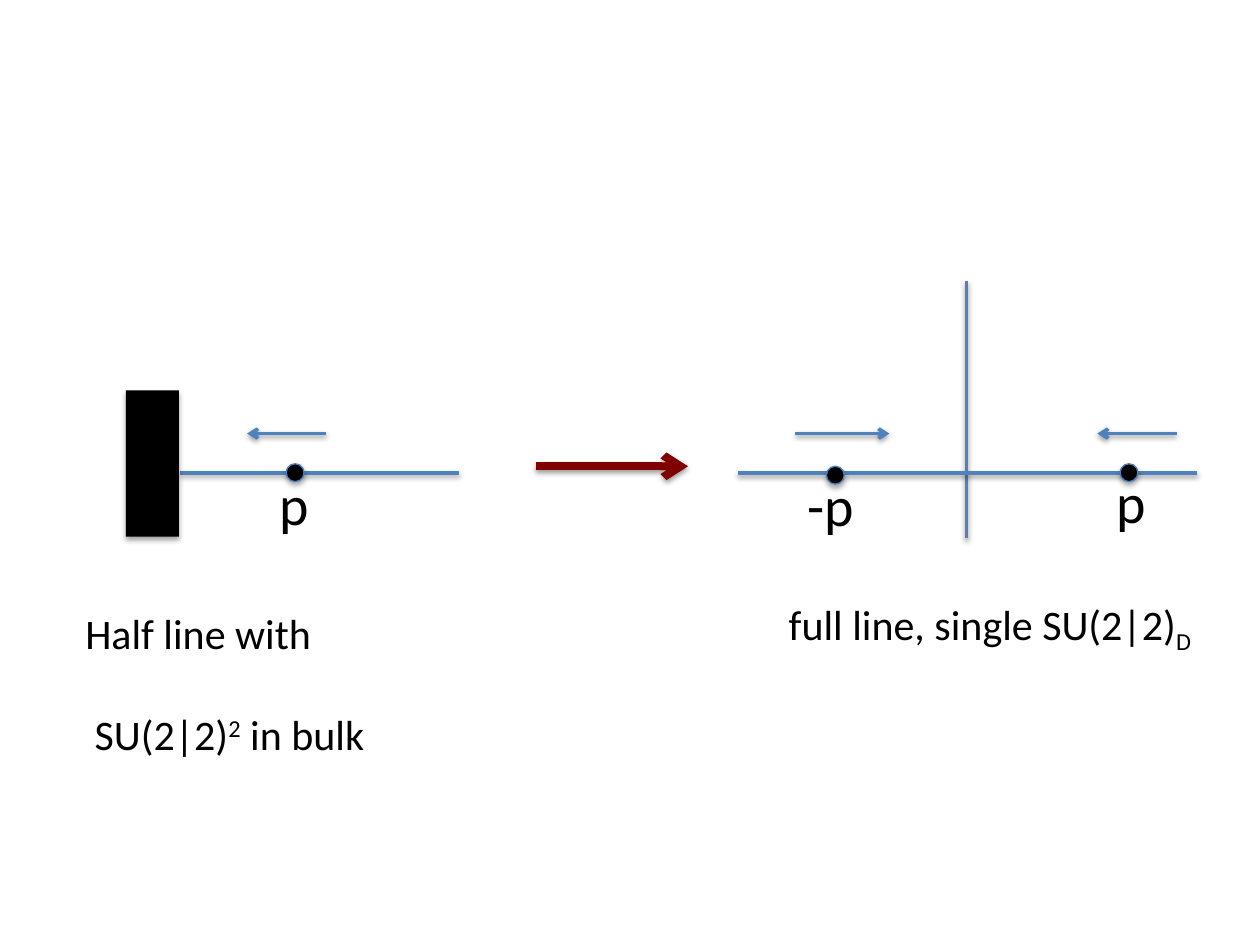
from dataclasses import dataclass

from lxml import etree
from pptx import Presentation
from pptx.dml.color import RGBColor
from pptx.enum import shapes, text
from pptx.oxml import ns
from pptx.util import Cm, Pt


@dataclass(frozen=True)
class Theme:
    """Colours, font and type sizes of the slide."""
    font: str = "Calibri"
    ink: str = "000000"
    axis: str = "4F81BD"
    edge: str = "4B7EBC"
    step: str = "800000"
    label: int = 32
    note: int = 24


class Sketch:
    """Draws styled elements on the current slide."""

    def __init__(self, slide, theme):
        self.slide = slide
        self.theme = theme

    def shade(self, props, alpha, dist):
        """Put a soft shadow below an element."""
        for old in props.findall(ns.qn("a:effectLst")):
            props.remove(old)
        effect = etree.SubElement(props, ns.qn("a:effectLst"))
        glow = etree.SubElement(effect, ns.qn("a:outerShdw"))
        values = {"blurRad": Pt(3.1), "dist": Pt(dist), "dir": 5400000, "rotWithShape": 0}
        for key, value in values.items():
            glow.set(key, str(int(value)))
        tint = etree.SubElement(glow, ns.qn("a:srgbClr"), val=self.theme.ink)
        etree.SubElement(tint, ns.qn("a:alpha"), val=str(alpha * 1000))

    def line(self, start, end, color=None, width=2, arrow=False):
        """Draw a straight line, with an arrowhead at its end if asked."""
        ends = [Cm(v) for v in (*start, *end)]
        link = self.slide.shapes.add_connector(shapes.MSO_CONNECTOR.STRAIGHT, *ends)
        link.line.color.rgb = RGBColor.from_string(color or self.theme.axis)
        link.line.width = Pt(width)
        props = link._element.spPr
        if arrow:
            etree.SubElement(props.find(ns.qn("a:ln")), ns.qn("a:tailEnd"), type="arrow")
        self.shade(props, 38, 1.6)

    def solid(self, kind, box, edge=None):
        """Draw a filled shape, outlined only if an edge colour is given."""
        shape = self.slide.shapes.add_shape(kind, *[Cm(v) for v in box])
        shape.fill.solid()
        shape.fill.fore_color.rgb = RGBColor.from_string(self.theme.ink)
        if edge:
            shape.line.color.rgb = RGBColor.from_string(edge)
            shape.line.width = Pt(0.75)
        else:
            shape.line.fill.background()
        shape.shadow.inherit = False
        self.shade(shape._element.spPr, 35, 1.8)

    def label(self, box, paras, size, gap=0, inset=0):
        """Add paragraphs made of (text, baseline) runs."""
        frame = self.slide.shapes.add_textbox(*[Cm(v) for v in box]).text_frame
        form = {"word_wrap": False, "auto_size": text.MSO_AUTO_SIZE.SHAPE_TO_FIT_TEXT}
        for key, value in form.items():
            setattr(frame, key, value)
        for row, runs in enumerate(paras):
            para = frame.add_paragraph() if row else frame.paragraphs[0]
            if row:
                para.space_before = Pt(gap)
                para._p.get_or_add_pPr().set("marL", str(int(Cm(inset))))
            for words, base in runs:
                run = para.add_run()
                run.text = words
                for key, value in {"name": self.theme.font, "size": Pt(size)}.items():
                    setattr(run.font, key, value)
                run.font.color.rgb = RGBColor.from_string(self.theme.ink)
                if base:
                    run._r.get_or_add_rPr().set("baseline", str(base * 1000))


def main():
    """Build the half line and full line diagram."""
    deck = Presentation()
    deck.slide_width, deck.slide_height = Cm(25.4), Cm(19.05)
    theme = Theme()
    art = Sketch(deck.slides.add_slide(deck.slide_layouts[6]), theme)
    axis, move = 9.53, 8.74

    art.line((10.8, 9.4), (13.87, 9.4), theme.step, 4.5, True)
    art.line((19.48, 5.66), (19.48, 10.85))
    for left, right in ((3.63, 9.25), (14.88, 24.13)):
        art.line((left, axis), (right, axis))
    for start, end in ((6.58, 4.98), (23.72, 22.12), (16.03, 17.93)):
        art.line((start, move), (end, move), arrow=True)

    art.solid(shapes.MSO_SHAPE.RECTANGLE, (2.54, 7.87, 1.07, 2.95))
    for left, top in ((5.77, 9.35), (22.58, 9.35), (16.66, 9.4)):
        art.solid(shapes.MSO_SHAPE.OVAL, (left, top, 0.36, 0.36), theme.edge)

    for name, left, top, width in (
        ("p", 5.38, 9.35, 1.12),
        ("-p", 16.03, 9.37, 1.47),
        ("p", 22.25, 9.3, 1.12),
    ):
        art.label((left, top, width, 1.63), [[(name, 0)]], theme.label)

    half = [[("Half line with", 0)], [("SU(2|2)", 0), ("2", 30), (" in bulk", 0)]]
    art.label((1.47, 12.12, 6.25, 3.33), half, theme.note, gap=29, inset=0.19)
    full = [[("full line, single SU(2|2)", 0), ("D", -25)]]
    art.label((15.65, 11.94, 8.74, 1.27), full, theme.note)
    deck.save("out.pptx")


if __name__ == "__main__":
    main()
